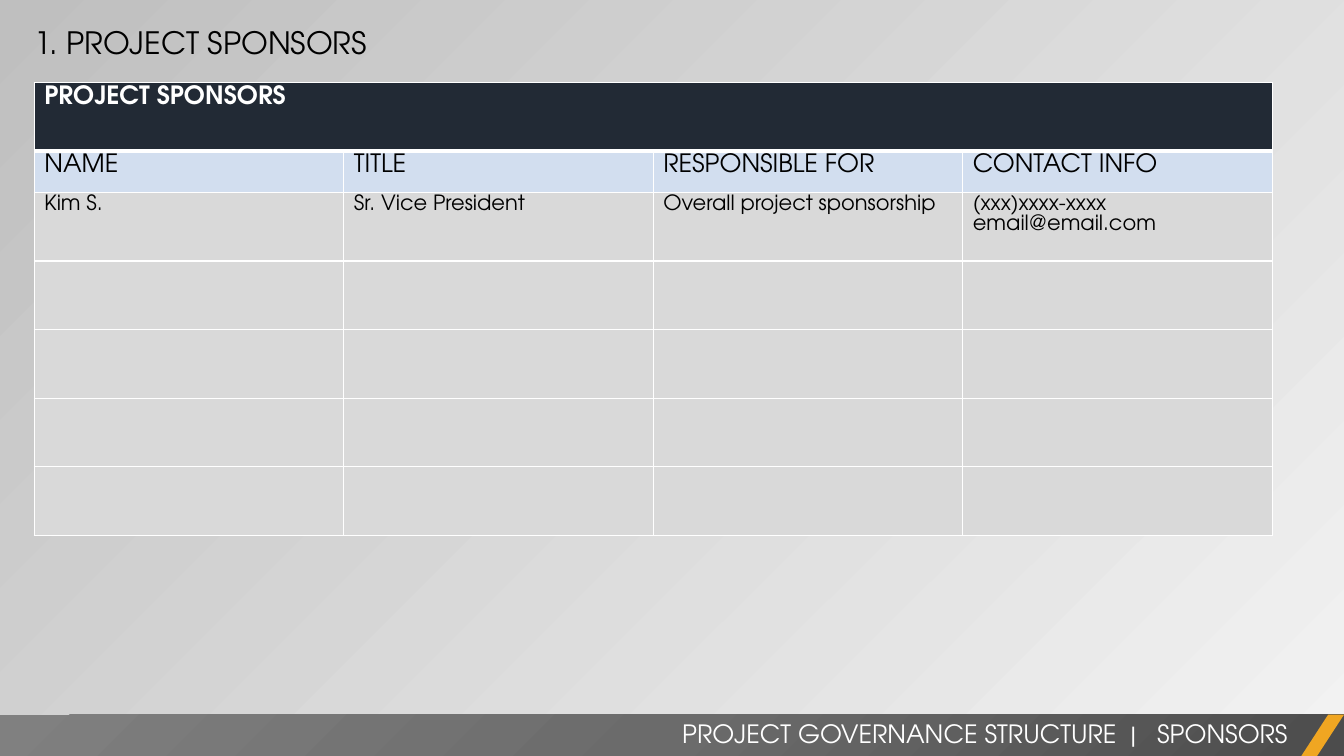
from lxml import etree
from pptx import Presentation
from pptx.dml.color import RGBColor as RGB
from pptx.enum.shapes import MSO_SHAPE as Shape
from pptx.enum.text import PP_ALIGN as Align
from pptx.oxml import parse_xml
from pptx.oxml.ns import nsdecls, qn
from pptx.util import Inches, Pt

FONT = "TeX Gyre Adventor"
COLORS = {
    "white": "FFFFFF", "black": "000000", "navy": "222A35",
    "blue": "D2DEEF", "gray": "D9D9D9", "gold": "F0A622",
    "light": "F2F2F2", "mid": "BFBFBF",
    "dark": "4C4C4C", "steel": "6B6B6B", "ash": "808080",
}


def style(para, size, color, bold=False):
    font = para.font
    font.name, font.size, font.bold = FONT, Pt(size), bold
    font.color.rgb = RGB.from_string(COLORS[color])


def label(text, left, top, width, height, size, color, align):
    box = slide.shapes.add_textbox(
        Inches(left), Inches(top), Inches(width), Inches(height))
    box.text_frame.word_wrap = True
    para = box.text_frame.paragraphs[0]
    para.text, para.alignment = text, align
    style(para, size, color)


deck = Presentation()
deck.slide_width, deck.slide_height = Inches(13.33), Inches(7.5)
slide = deck.slides.add_slide(deck.slide_layouts[6])

# Background gradient
back = slide.background.fill
back.gradient()
back.gradient_angle = 135
for stop, name, place in zip(back.gradient_stops, ("light", "mid"), (0, 1)):
    stop.color.rgb = RGB.from_string(COLORS[name])
    stop.position = place

# Footer bar with a radial gradient, and its gold accent
pen = slide.shapes.build_freeform(0, Inches(7.09))
pen.add_line_segments([
    (Inches(13.33), Inches(7.09)), (Inches(13.33), Inches(7.51)),
    (0, Inches(7.51))])
bar = pen.convert_to_shape()
accent = slide.shapes.add_shape(
    Shape.PARALLELOGRAM, Inches(12.9), Inches(7.09), Inches(0.43), Inches(0.42))
accent.adjustments[0] = 0.65
for shape in (bar, accent):
    shape.shadow.inherit = False
    shape.line.fill.background()
    shape.fill.solid()
accent.fill.fore_color.rgb = RGB.from_string(COLORS["gold"])

stops = "".join(
    f'<a:gs pos="{pos}"><a:srgbClr val="{COLORS[name]}"/></a:gs>'
    for pos, name in ((0, "dark"), (50000, "steel"), (100000, "ash")))
radial = parse_xml(
    f'<a:gradFill {nsdecls("a")} rotWithShape="1"><a:gsLst>{stops}</a:gsLst>'
    '<a:path path="circle"><a:fillToRect l="100000" t="100000"/></a:path>'
    '</a:gradFill>')
props = bar._element.spPr
props.replace(props.find(qn("a:solidFill")), radial)

label("PROJECT GOVERNANCE STRUCTURE  |   SPONSORS",
      5.25, 7.08, 7.62, 0.4, 18, "white", Align.RIGHT)

# Sponsor table
ROWS = [
    ["PROJECT SPONSORS"],
    ["NAME", "TITLE", "RESPONSIBLE FOR", "CONTACT INFO"],
    ["Kim S.", "Sr. Vice President", "Overall project sponsorship",
     "(xxx)xxxx-xxxx\nemail@email.com"],
]
LOOKS = [("navy", 18, "white", True), ("blue", 18, "black", False)]
BODY = ("gray", 15, "black", False)

table = slide.shapes.add_table(
    7, 4, Inches(0.34), Inches(0.82), Inches(12.28), Inches(4.48)).table
table.horz_banding = False
for col in table.columns:
    col.width = Inches(3.07)
for r, row in enumerate(table.rows):
    row.height = Inches(0.41 if r == 1 else 0.68)
    fill, size, color, bold = LOOKS[r] if r < len(LOOKS) else BODY
    texts = ROWS[r] if r < len(ROWS) else []
    for c, cell in enumerate(row.cells):
        cell.text = texts[c] if c < len(texts) else ""
        cell.margin_top = Inches(0.03)
        for para in cell.text_frame.paragraphs:
            style(para, size, color, bold)
        # Borders come before the fill in the cell properties
        tc = cell._tc.get_or_add_tcPr()
        for side in "LRTB":
            heavy = (r, side) in ((0, "B"), (1, "T"))
            line = etree.SubElement(
                tc, qn(f"a:ln{side}"), w=str(Pt(3 if heavy else 1)))
            paint = etree.SubElement(line, qn("a:solidFill"))
            etree.SubElement(paint, qn("a:srgbClr"), val=COLORS["white"])
        cell.fill.solid()
        cell.fill.fore_color.rgb = RGB.from_string(COLORS[fill])
table.cell(0, 0).merge(table.cell(0, 3))

# Slide heading
label("1. PROJECT SPONSORS", 0.24, 0.19, 6.67, 0.47, 22, "black", Align.LEFT)

deck.save("out.pptx")
